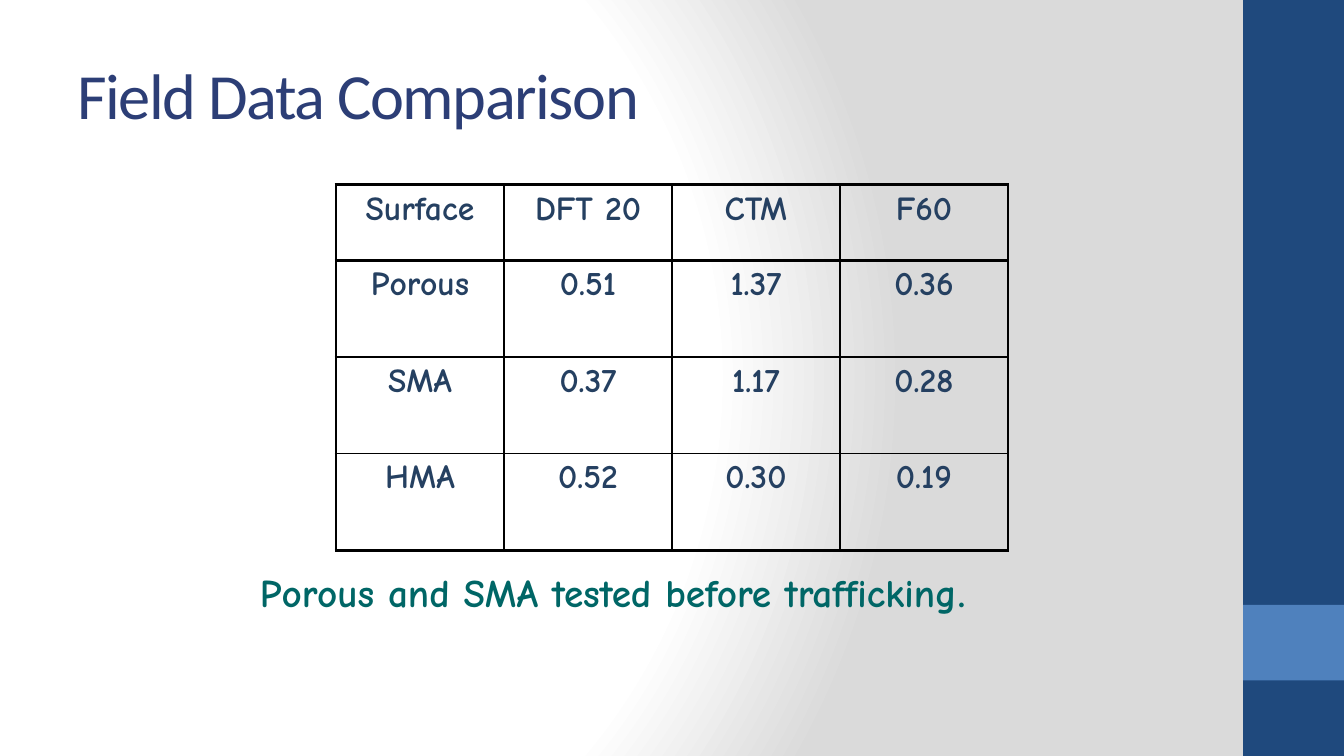
import pptx
import pptx.dml.color
import pptx.enum.shapes
import pptx.enum.text
import pptx.oxml
import pptx.oxml.ns
import pptx.util

Pt = pptx.util.Pt

# Content
TITLE = "Field Data Comparison"
ROWS = [
    ("Surface", "DFT 20", "CTM", "F60"),
    ("Porous", "0.51", "1.37", "0.36"),
    ("SMA", "0.37", "1.17", "0.28"),
    ("HMA", "0.52", "0.30", "0.19"),
]
CAPTION = "Porous and SMA tested before trafficking"

COLORS = {
    "white": "FFFFFF", "gray": "DADADA", "band": "1F497D", "accent": "4F81BD",
    "title": "2C3E76", "cell": "254061", "caption": "006666", "border": "000000",
}
BODY_FONT, TITLE_FONT = "Comic Neue", "Calibri"
WIDTH, HEIGHT, BAND_WIDTH = 960, 540, 72
COLUMN_WIDTH, HEADER_HEIGHT, ROW_HEIGHT = 120, 54, 69
THICK, THIN = 2.25, 1
NAMESPACE = pptx.oxml.ns.nsdecls("a")


def color(name):
    return pptx.dml.color.RGBColor.from_string(COLORS[name])


def style(font, name, size, color_name, bold=False):
    font.name, font.size, font.bold = name, Pt(size), bold
    font.color.rgb = color(color_name)


def add_text(left, top, width, height, text):
    frame = slide.shapes.add_textbox(Pt(left), Pt(top), Pt(width), Pt(height)).text_frame
    frame.word_wrap = True
    frame.paragraphs[0].add_run().text = text
    return frame


def set_borders(cell, widths):
    properties = cell._tc.get_or_add_tcPr()
    for index, (side, width) in enumerate(widths.items()):
        properties.insert(index, pptx.oxml.parse_xml(
            f'<a:ln{side} {NAMESPACE} w="{Pt(width)}"><a:solidFill>'
            f'<a:srgbClr val="{COLORS["border"]}"/></a:solidFill></a:ln{side}>'))


presentation = pptx.Presentation()
presentation.slide_width, presentation.slide_height = Pt(WIDTH), Pt(HEIGHT)
slide = presentation.slides.add_slide(presentation.slide_layouts[6])

# Radial background
slide.background.fill.gradient()
gradient = slide.element.find(".//" + pptx.oxml.ns.qn("a:gradFill"))
stops = "".join(
    f'<a:gs pos="{position * 1000}"><a:srgbClr val="{COLORS[name]}"/></a:gs>'
    for position, name in [(0, "white"), (75, "white"), (100, "gray")])
gradient.getparent().replace(gradient, pptx.oxml.parse_xml(
    f'<a:gradFill {NAMESPACE} rotWithShape="1"><a:gsLst>{stops}</a:gsLst>'
    '<a:path path="circle"><a:fillToRect l="20000" t="50000" r="100000" b="50000"/>'
    '</a:path></a:gradFill>'))

# Side band and its accent
for top, height, name in [(0, HEIGHT, "band"), (432, 54, "accent")]:
    band = slide.shapes.add_shape(
        pptx.enum.shapes.MSO_SHAPE.RECTANGLE,
        Pt(WIDTH - BAND_WIDTH), Pt(top), Pt(BAND_WIDTH), Pt(height))
    band.shadow.inherit = False
    band.fill.solid()
    band.fill.fore_color.rgb = color(name)
    band.line.fill.background()

# Title
title = add_text(48, 21.6, 800, 90, TITLE)
title.vertical_anchor = pptx.enum.text.MSO_ANCHOR.MIDDLE
style(title.paragraphs[0].font, TITLE_FONT, 46, "title")
title.paragraphs[0].runs[0].font._element.set("spc", "-100")

# Table, centred on the slide
row_count, column_count = len(ROWS), len(ROWS[0])
table_width = column_count * COLUMN_WIDTH
table_height = HEADER_HEIGHT + (row_count - 1) * ROW_HEIGHT
table = slide.shapes.add_table(
    row_count, column_count, Pt((WIDTH - table_width) / 2), Pt(132),
    Pt(table_width), Pt(table_height)).table
table.first_row = table.horz_banding = False
for column in table.columns:
    column.width = Pt(COLUMN_WIDTH)
for row_index, values in enumerate(ROWS):
    table.rows[row_index].height = Pt(ROW_HEIGHT if row_index else HEADER_HEIGHT)
    for column_index, value in enumerate(values):
        cell = table.cell(row_index, column_index)
        cell.text = value
        cell.fill.background()
        paragraph = cell.text_frame.paragraphs[0]
        paragraph.alignment = pptx.enum.text.PP_ALIGN.CENTER
        style(paragraph.font, BODY_FONT, 24, "cell", True)
        # Thick frame and thick rule under the header
        set_borders(cell, {
            "L": THICK if column_index == 0 else THIN,
            "R": THICK if column_index == column_count - 1 else THIN,
            "T": THICK if row_index <= 1 else THIN,
            "B": THICK if row_index in (0, row_count - 1) else THIN,
        })

# Caption, with its full stop in the title font
caption = add_text(178.6, 402.5, 609, 41, CAPTION).paragraphs[0]
style(caption.runs[0].font, BODY_FONT, 28, "caption", True)
full_stop = caption.add_run()
full_stop.text = "."
style(full_stop.font, TITLE_FONT, 28, "caption")

presentation.save("out.pptx")
